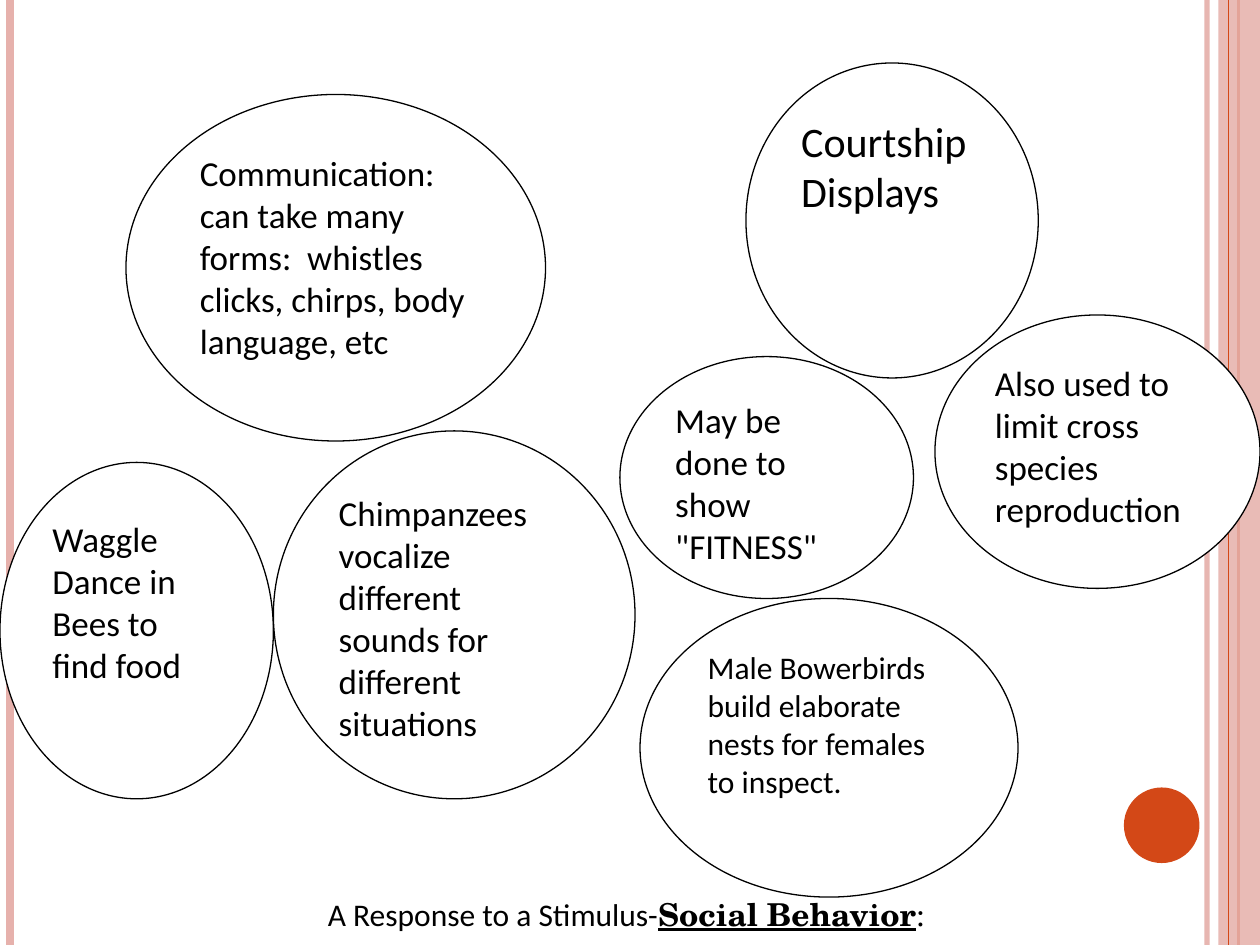
from dataclasses import dataclass

import pptx
import pptx.dml.color
import pptx.enum.shapes
import pptx.enum.text
import pptx.oxml.ns
import pptx.util
from lxml import etree

Inches = pptx.util.Inches
Pt = pptx.util.Pt
Shape = pptx.enum.shapes.MSO_SHAPE

BLACK, WHITE, PINK, ORANGE = "000000", "FFFFFF", "E6B1AC", "D34817"
BODY_FONT, ACCENT_FONT = "Calibri", "TeX Gyre Schola"


@dataclass
class Stripe:
    x: float
    color: str
    weight: float
    opacity: int = 100


@dataclass
class Bubble:
    left: float
    top: float
    width: float
    height: float
    text: str
    size: int = 20


BACK_STRIPES = [
    Stripe(9.58, PINK, 3, 93),
    Stripe(0.08, PINK, 4.5),
    Stripe(9.83, ORANGE, 1.5),
]
FRONT_STRIPE = Stripe(9.75, ORANGE, 0.75)

BUBBLES = [
    Bubble(1, 0.75, 3.33, 2.75,
           "Communication: can take many forms:  whistles clicks, chirps, body language, etc"),
    Bubble(0, 3.67, 2.17, 2.67, "Waggle Dance in Bees to find food"),
    Bubble(2.17, 3.42, 2.87, 2.92,
           "Chimpanzees vocalize different sounds for different situations"),
    Bubble(5.92, 0.5, 2.32, 2.5, "Courtship Displays", 24),
    Bubble(7.42, 2.5, 2.58, 2.17, "Also used to limit cross species reproduction"),
    Bubble(4.92, 2.83, 2.33, 1.92, 'May be done to show "FITNESS"'),
    Bubble(5.08, 4.75, 3, 2.37,
           "Male Bowerbirds build elaborate nests for females to inspect.", 18),
]


def rgb(color: str) -> pptx.dml.color.RGBColor:
    return pptx.dml.color.RGBColor.from_string(color)


def set_opacity(element, percent: int) -> None:
    """Apply an alpha value to the first colour inside the element."""
    color = next(element.iter(pptx.oxml.ns.qn("a:srgbClr")))
    alpha = etree.SubElement(color, pptx.oxml.ns.qn("a:alpha"))
    alpha.set("val", str(percent * 1000))


def draw_stripe(slide, stripe: Stripe) -> None:
    line = slide.shapes.add_connector(
        pptx.enum.shapes.MSO_CONNECTOR.STRAIGHT,
        Inches(stripe.x), 0, Inches(stripe.x), Inches(7.5))
    line.line.color.rgb = rgb(stripe.color)
    line.line.width = Pt(stripe.weight)
    properties = line._element.spPr
    if stripe.opacity < 100:
        set_opacity(properties, stripe.opacity)
    etree.SubElement(properties, pptx.oxml.ns.qn("a:effectLst"))


def draw_shape(slide, kind, left: float, top: float, width: float, height: float, fill: str):
    shape = slide.shapes.add_shape(
        kind, Inches(left), Inches(top), Inches(width), Inches(height))
    shape.shadow.inherit = False
    shape.fill.solid()
    shape.fill.fore_color.rgb = rgb(fill)
    shape.line.fill.background()
    return shape


def draw_bubble(slide, bubble: Bubble) -> None:
    oval = draw_shape(slide, Shape.OVAL, bubble.left, bubble.top,
                      bubble.width, bubble.height, WHITE)
    oval.line.color.rgb = rgb(BLACK)
    oval.line.width = Pt(0.75)
    frame = oval.text_frame
    frame.word_wrap = True
    frame.vertical_anchor = pptx.enum.text.MSO_ANCHOR.TOP
    paragraph = frame.paragraphs[0]
    paragraph.text = bubble.text
    paragraph.alignment = pptx.enum.text.PP_ALIGN.LEFT
    paragraph.space_after = Pt(10)
    paragraph.font.name = BODY_FONT
    paragraph.font.size = Pt(bubble.size)
    paragraph.font.color.rgb = rgb(BLACK)


def write_title(slide) -> None:
    title = slide.shapes.title
    title.left, title.top = Inches(2.47), Inches(7.05)
    title.width, title.height = Inches(5.07), Inches(0.4)
    frame = title.text_frame
    frame.word_wrap = False
    frame.auto_size = pptx.enum.text.MSO_AUTO_SIZE.SHAPE_TO_FIT_TEXT
    frame.vertical_anchor = pptx.enum.text.MSO_ANCHOR.MIDDLE
    paragraph = frame.paragraphs[0]
    paragraph.alignment = pptx.enum.text.PP_ALIGN.CENTER
    paragraph.font.size = Pt(18)
    paragraph.font.color.rgb = rgb(BLACK)
    for text, font, emphasis in [
        ("A Response to a Stimulus-", BODY_FONT, False),
        ("Social Behavior", ACCENT_FONT, True),
        (": ", ACCENT_FONT, False),
    ]:
        run = paragraph.add_run()
        run.text = text
        run.font.name = font
        run.font.bold = run.font.underline = emphasis


def main() -> None:
    deck = pptx.Presentation()
    deck.slide_width, deck.slide_height = Inches(10), Inches(7.5)
    slide = deck.slides.add_slide(deck.slide_layouts.get_by_name("Title Only"))

    for stripe in BACK_STRIPES:
        draw_stripe(slide, stripe)
    band = draw_shape(slide, Shape.RECTANGLE, 9.67, 0, 0.33, 7.5, PINK)
    set_opacity(band._element.spPr, 87)
    draw_stripe(slide, FRONT_STRIPE)
    draw_shape(slide, Shape.OVAL, 8.92, 6.25, 0.6, 0.6, ORANGE)

    write_title(slide)
    for bubble in BUBBLES:
        draw_bubble(slide, bubble)
    deck.save("out.pptx")


if __name__ == "__main__":
    main()
